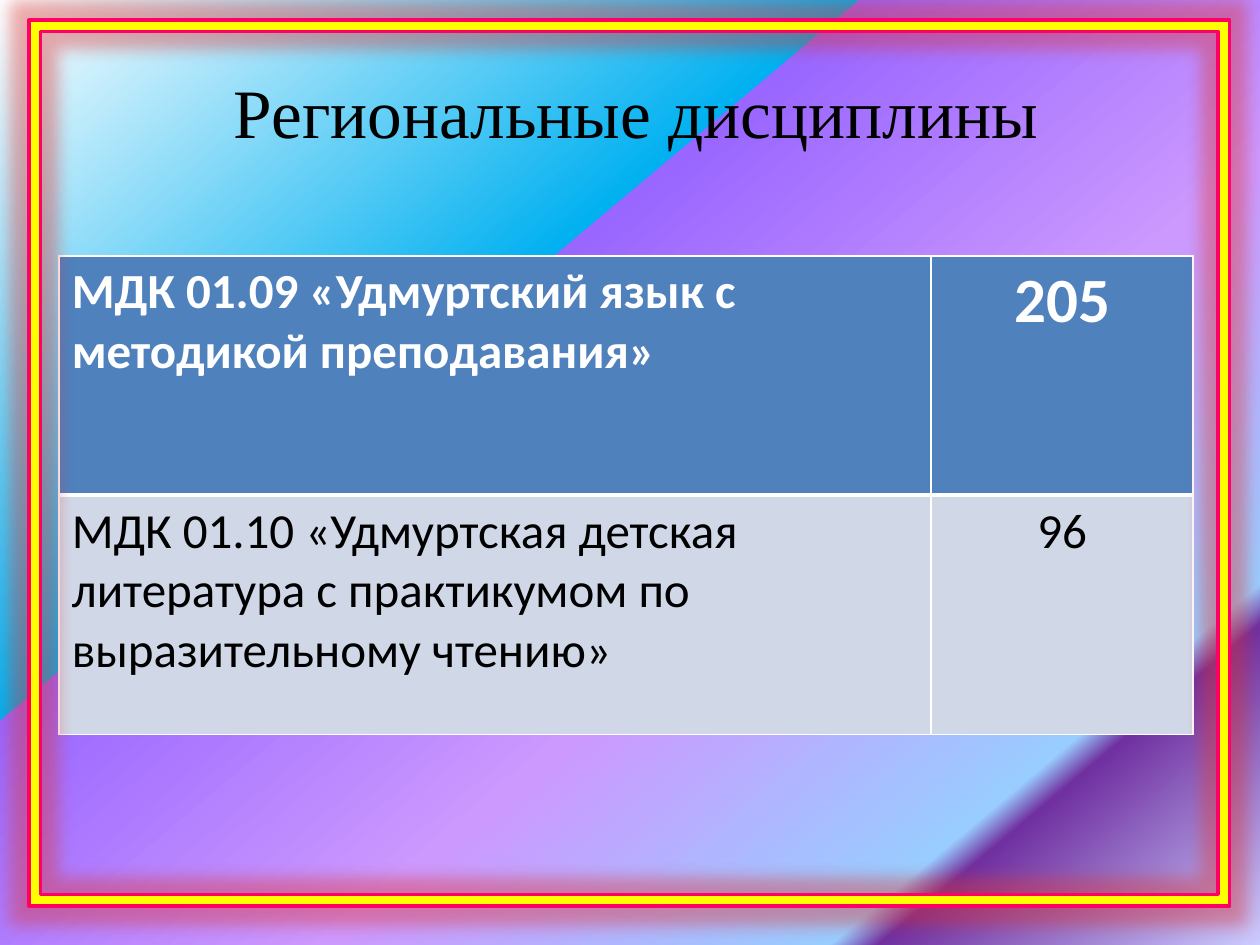
from lxml.etree import SubElement
from pptx import Presentation
from pptx.dml.color import RGBColor
from pptx.enum.shapes import MSO_SHAPE as Shape
from pptx.enum.text import MSO_ANCHOR as Anchor, PP_ALIGN as Align
from pptx.oxml import parse_xml
from pptx.oxml.ns import nsdecls, qn
from pptx.util import Inches, Pt

TITLE = "Региональные дисциплины"
ROWS = [
    ("МДК 01.09 «Удмуртский язык с методикой преподавания»", "205"),
    ("МДК 01.10 «Удмуртская детская литература с практикумом по выразительному чтению»", "96"),
]
ROW_STYLES = [
    {"fill": "4F81BD", "color": "FFFFFF", "bold": True, "sizes": (28, 36),
     "borders": {"L": 1, "R": 1, "T": 1, "B": 3}},
    {"fill": "D0D8E8", "color": "000000", "bold": False, "sizes": (28, 28),
     "borders": {"L": 1, "R": 1, "T": 3, "B": 1}},
]
ALIGNMENTS = (Align.LEFT, Align.CENTER)
COLUMN_WIDTHS = (6.92, 2.08)
ROW_HEIGHT = 1.9
BACKGROUND_STOPS = [(0, "FFFFFF"), (36, "00B0F0"), (36, "9966FF"), (61, "CC99FF"),
                    (82, "99CCFF"), (84, "7030A0"), (100, "CCCCFF")]
BACKGROUND_ANGLE = 50
GLOW = {"color": "E0302C", "radius": 18, "opacity": 40}


def rgb(color):
    return RGBColor.from_string(color)


def paint_background(slide):
    stops = "".join(f'<a:gs pos="{position * 1000}"><a:srgbClr val="{color}"/></a:gs>'
                    for position, color in BACKGROUND_STOPS)
    background = parse_xml(
        f'<p:bg {nsdecls("p", "a")}><p:bgPr><a:gradFill rotWithShape="1"><a:gsLst>{stops}</a:gsLst>'
        f'<a:lin ang="{BACKGROUND_ANGLE * 60000}" scaled="0"/></a:gradFill>'
        '<a:effectLst/></p:bgPr></p:bg>')
    slide.element.cSld.insert(0, background)


def write(text_frame, text, size, color, alignment, font_name, bold=False):
    text_frame.word_wrap = True
    paragraph = text_frame.paragraphs[0]
    paragraph.text = text
    paragraph.alignment = alignment
    font = paragraph.font
    font.size, font.name, font.bold = Pt(size), font_name, bold
    font.color.rgb = rgb(color)


def add_title(slide):
    box = slide.shapes.add_textbox(Inches(0.55), Inches(0.55), Inches(9), Inches(1.25))
    box.text_frame.margin_top = 0
    box.text_frame.vertical_anchor = Anchor.TOP
    write(box.text_frame, TITLE, 39.6, "000000", Align.CENTER, "Times New Roman")


def set_borders(cell, widths):
    properties = cell._tc.get_or_add_tcPr()
    for index, (side, width) in enumerate(widths.items()):
        properties.insert(index, parse_xml(
            f'<a:ln{side} {nsdecls("a")} w="{Pt(width)}"><a:solidFill>'
            f'<a:srgbClr val="FFFFFF"/></a:solidFill></a:ln{side}>'))


def add_hours_table(slide):
    table = slide.shapes.add_table(
        len(ROWS), len(COLUMN_WIDTHS), Inches(0.47), Inches(2.03),
        Inches(sum(COLUMN_WIDTHS)), Inches(ROW_HEIGHT * len(ROWS))).table
    for column, width in zip(table.columns, COLUMN_WIDTHS):
        column.width = Inches(width)
    for row, texts, style in zip(table.rows, ROWS, ROW_STYLES):
        row.height = Inches(ROW_HEIGHT)
        for cell, text, size, alignment in zip(row.cells, texts, style["sizes"], ALIGNMENTS):
            cell.fill.solid()
            cell.fill.fore_color.rgb = rgb(style["fill"])
            set_borders(cell, style["borders"])
            write(cell.text_frame, text, size, style["color"], alignment, "Calibri", style["bold"])


def add_frame(slide):
    frame = slide.shapes.add_shape(
        Shape.FRAME, Inches(0.23), Inches(0.16), Inches(9.53), Inches(7.03))
    frame.adjustments[0] = 0.013
    frame.fill.solid()
    frame.fill.fore_color.rgb = rgb("FFFF00")
    frame.line.color.rgb = rgb("FF0066")
    frame.line.width = Pt(2)
    frame.shadow.inherit = False
    effects = frame.element.spPr.find(qn("a:effectLst"))
    glow = SubElement(effects, qn("a:glow"), rad=str(Pt(GLOW["radius"])))
    color = SubElement(glow, qn("a:srgbClr"), val=GLOW["color"])
    SubElement(color, qn("a:alpha"), val=str(GLOW["opacity"] * 1000))


def main():
    presentation = Presentation()
    presentation.slide_width, presentation.slide_height = Inches(10), Inches(7.5)
    slide = presentation.slides.add_slide(presentation.slide_layouts[6])
    paint_background(slide)
    add_title(slide)
    add_hours_table(slide)
    add_frame(slide)
    presentation.save("out.pptx")


if __name__ == "__main__":
    main()
